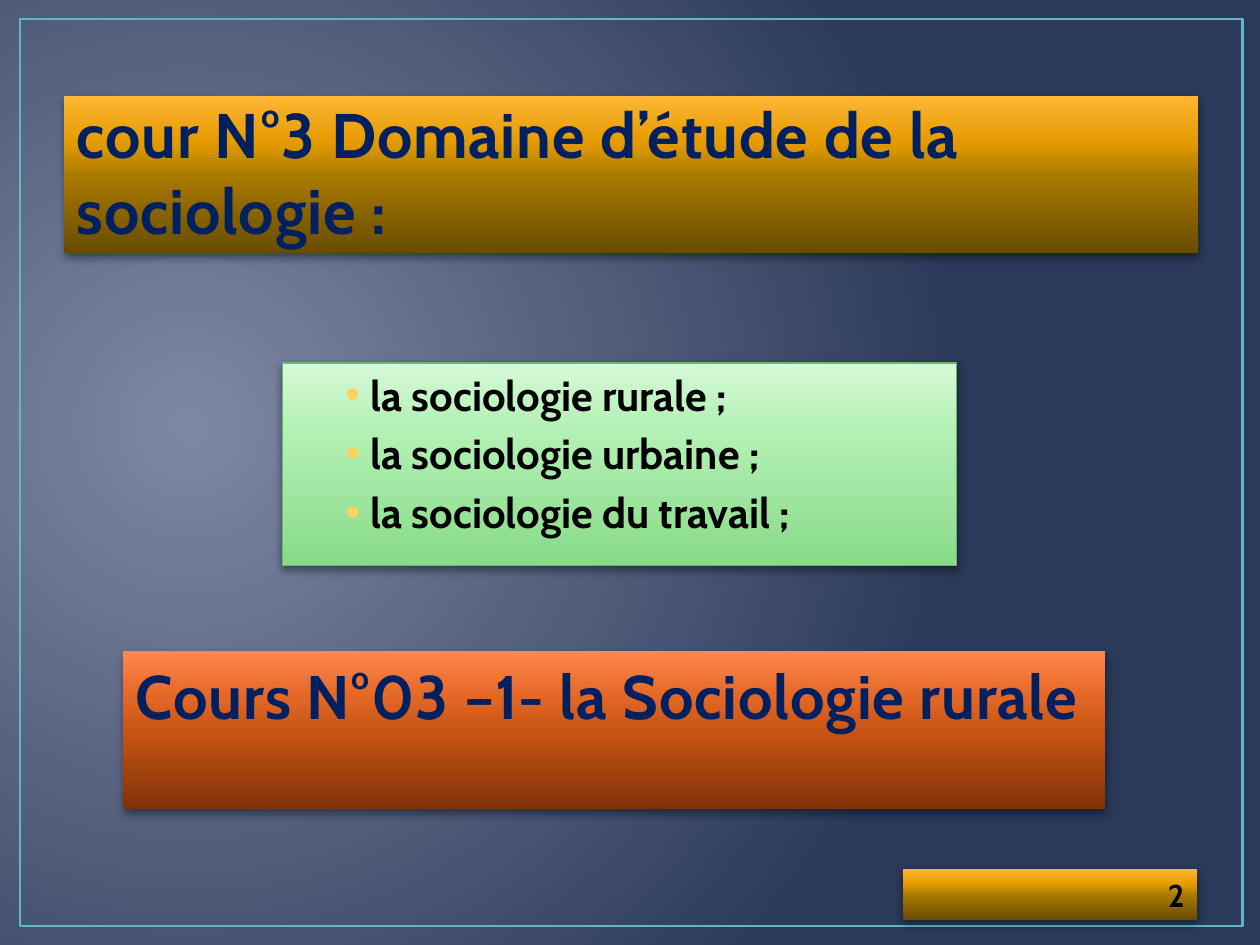
from dataclasses import dataclass

from lxml import etree
from pptx import Presentation
from pptx.dml.color import RGBColor
from pptx.enum.shapes import MSO_SHAPE
from pptx.enum.text import MSO_ANCHOR, MSO_AUTO_SIZE, PP_ALIGN
from pptx.oxml import parse_xml
from pptx.oxml.ns import qn
from pptx.shapes.autoshape import Shape
from pptx.util import Inches, Pt

RECTANGLE = MSO_SHAPE.RECTANGLE
LEFT, RIGHT = PP_ALIGN.LEFT, PP_ALIGN.RIGHT
TOP, BOTTOM = MSO_ANCHOR.TOP, MSO_ANCHOR.BOTTOM
NO_AUTOFIT = MSO_AUTO_SIZE.NONE
DRAWING = "http://schemas.openxmlformats.org/drawingml/2006/main"
FONT = "Cabin"
NAVY, BLACK = "002060", "000000"
UPWARD = '<a:lin ang="16200000" scaled="0"/>'
FROM_LEFT = ('<a:path path="circle">'
             '<a:fillToRect l="15000" t="50000" r="85000" b="60000"/></a:path>')

Stops = tuple[tuple[int, str], ...]
NIGHT: Stops = ((0, "7E88A3"), (100, "2B395A"))
GOLD: Stops = ((0, "694C00"), (50, "AA7A00"), (70, "E49B00"), (100, "FFB634"))
ORANGE: Stops = ((0, "803309"), (50, "C95414"), (70, "E26625"), (100, "FF874D"))
GREEN: Stops = ((0, "88DB8A"), (65, "B2F0B3"), (100, "D5F9D6"))


@dataclass
class Panel:
    left: float
    top: float
    width: float
    height: float
    stops: Stops
    lines: tuple[str, ...]
    size: float
    color: str = NAVY
    anchor: MSO_ANCHOR = BOTTOM
    align: PP_ALIGN = LEFT
    spacing: float = 0.5
    bulleted: bool = False

    def box(self) -> tuple:
        return tuple(map(Inches, (self.left, self.top, self.width, self.height)))


TITLE = Panel(0.51, 0.76, 9, 1.25, GOLD,
              ("cour N°3 Domaine d’étude de la sociologie :",), 36)
BRANCHES = Panel(2.24, 2.88, 5.35, 1.61, GREEN,
                 ("la sociologie rurale ;", "la sociologie urbaine ;",
                  "la sociologie du travail ;"),
                 24, BLACK, TOP, spacing=0, bulleted=True)
PAGE_NUMBER = Panel(7.17, 6.9, 2.33, 0.4, GOLD, ("2",), 18, BLACK, align=RIGHT)
LESSON = Panel(0.98, 5.17, 7.79, 1.25, ORANGE,
               ("Cours N°03 –1- la Sociologie rurale",), 35.1, anchor=TOP)


def rgb(color: str) -> RGBColor:
    return RGBColor.from_string(color)


def gradient(stops: Stops, direction: str) -> etree.ElementBase:
    marks = "".join(f'<a:gs pos="{position * 1000}"><a:srgbClr val="{color}"/></a:gs>'
                    for position, color in stops)
    return parse_xml(f'<a:gradFill xmlns:a="{DRAWING}" rotWithShape="1">'
                     f'<a:gsLst>{marks}</a:gsLst>{direction}</a:gradFill>')


def put_gradient(fill, parent: etree.ElementBase, stops: Stops, direction: str) -> None:
    """Swap the empty fill of a parent element for a gradient."""
    fill.background()
    empty = next(parent.iter(qn("a:noFill")))
    empty.getparent().replace(empty, gradient(stops, direction))


def add_shadow(shape: Shape) -> None:
    shape.shadow.inherit = False
    effects = next(shape.element.iter(qn("a:effectLst")))
    effects.append(parse_xml(
        f'<a:outerShdw xmlns:a="{DRAWING}" blurRad="{Pt(5)}" dist="{Pt(2)}" '
        'dir="5400000" rotWithShape="0"><a:srgbClr val="000000">'
        '<a:alpha val="43000"/></a:srgbClr></a:outerShdw>'))


def add_bullet(paragraph) -> None:
    paragraph.level = 1
    properties = paragraph._p.get_or_add_pPr()
    properties.set("marL", str(Inches(0.6)))
    properties.set("indent", str(Inches(-0.2)))
    color = etree.SubElement(properties, qn("a:buClr"))
    etree.SubElement(color, qn("a:srgbClr"), val="FFD25D")
    etree.SubElement(properties, qn("a:buFont"), typeface="Arial")
    etree.SubElement(properties, qn("a:buChar"), char="•")


def write_lines(shape: Shape, panel: Panel) -> None:
    frame = shape.text_frame
    frame.word_wrap = True
    frame.auto_size = NO_AUTOFIT
    frame.vertical_anchor = panel.anchor
    for index, line in enumerate(panel.lines):
        paragraph = frame.add_paragraph() if index else frame.paragraphs[0]
        if panel.bulleted:
            add_bullet(paragraph)
        paragraph.alignment = panel.align
        paragraph.space_before = Pt(4.8 if index else 0)
        run = paragraph.add_run()
        run.text = line
        run.font.name = FONT
        run.font.size = Pt(panel.size)
        run.font.bold = True
        run.font.color.rgb = rgb(panel.color)
        if panel.spacing:
            run._r.get_or_add_rPr().set("spc", str(int(panel.spacing * 100)))


def style_panel(shape: Shape, panel: Panel) -> None:
    shape.left, shape.top, shape.width, shape.height = panel.box()
    put_gradient(shape.fill, shape.element.spPr, panel.stops, UPWARD)
    shape.line.fill.background()
    add_shadow(shape)
    write_lines(shape, panel)


def main() -> None:
    presentation = Presentation()
    presentation.slide_width, presentation.slide_height = Inches(10), Inches(7.5)
    slide = presentation.slides.add_slide(presentation.slide_layouts[1])
    put_gradient(slide.background.fill, slide.element, NIGHT, FROM_LEFT)

    style_panel(slide.shapes.title, TITLE)
    branches = slide.placeholders[1]
    style_panel(branches, BRANCHES)
    branches.line.color.rgb = rgb("6BB76D")
    branches.line.width = Pt(0.75)
    for panel in (PAGE_NUMBER, LESSON):
        style_panel(slide.shapes.add_shape(RECTANGLE, *panel.box()), panel)

    border = slide.shapes.add_shape(RECTANGLE, Inches(0.16), Inches(0.15),
                                    Inches(9.7), Inches(7.2))
    border.shadow.inherit = False
    border.fill.background()
    border.line.color.rgb = rgb("60B5CC")
    border.line.width = Pt(1.5)
    slide.shapes.title.element.addprevious(border.element)

    presentation.save("out.pptx")


if __name__ == "__main__":
    main()
